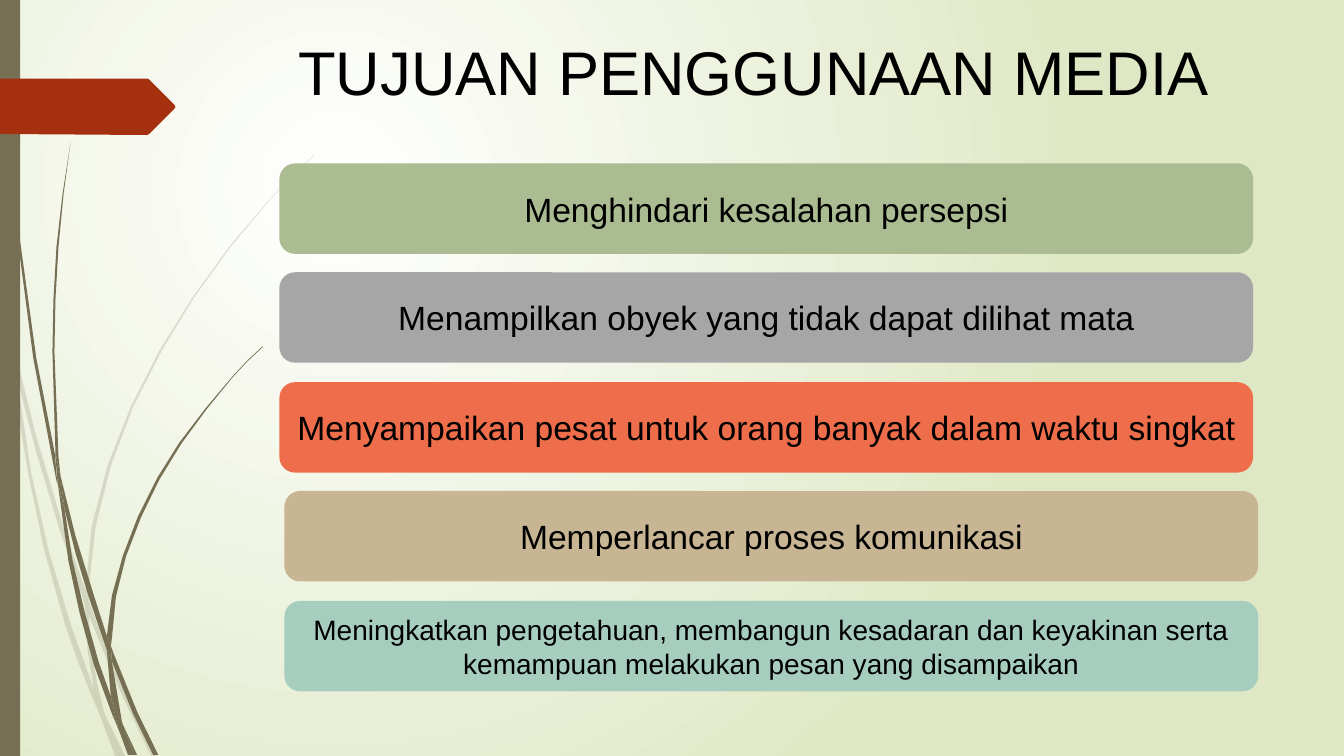
from dataclasses import dataclass

from lxml import etree
from pptx import Presentation
from pptx.dml.color import RGBColor
from pptx.enum.shapes import MSO_SHAPE
from pptx.enum.text import MSO_ANCHOR, PP_ALIGN
from pptx.oxml.ns import qn
from pptx.util import Pt

RECTANGLE = MSO_SHAPE.RECTANGLE
ROUNDED = MSO_SHAPE.ROUNDED_RECTANGLE
MIDDLE = MSO_ANCHOR.MIDDLE
CENTER = PP_ALIGN.CENTER

EMU_PER_PX = 9144
SLIDE_WIDTH, SLIDE_HEIGHT = 1333, 750


@dataclass(frozen=True)
class Theme:
    font: str = "Arial"
    ink: str = "000000"
    glow: str = "FFFFFF"
    backdrop: str = "DFE8C4"
    stalk: str = "766F54"
    tag: str = "A53010"
    sage: str = "ACBC92"
    gray: str = "A6A6A6"
    coral: str = "EE6E4B"
    sand: str = "C8B594"
    mint: str = "A6CDBD"
    title_size: int = 44
    goal_size: int = 24
    small_size: int = 20
    pale_alpha: int = 20


PALE_STALKS = [
    [(11, 350), (9, 322), (0, 282), (0, 299), (10, 344)],
    [(58, 522), (84, 599), (85, 586), (62, 520), (36, 433), (14, 345), (17, 376), (36, 449)],
    [(92, 607), (88, 596), (88, 610), (105, 652), (123, 694), (150, 750), (155, 750),
     (127, 692), (109, 650)],
    [(119, 750), (124, 750), (105, 711)],
    [(93, 683), (70, 619), (48, 545), (31, 469), (17, 376), (11, 350), (18, 410), (28, 470),
     (44, 546), (65, 621), (78, 658), (92, 693), (101, 714), (99, 707)],
    [(84, 599), (87, 646), (93, 683), (96, 692), (105, 711), (103, 706), (96, 676),
     (91, 646), (88, 610), (88, 608)],
    [(88, 584), (95, 522), (110, 462), (132, 404), (160, 349), (192, 296), (229, 245),
     (268, 198), (290, 175), (312, 154), (312, 153), (289, 175), (268, 197), (228, 244),
     (191, 295), (158, 348), (130, 403), (107, 461), (91, 522), (85, 584), (85, 586), (88, 596)],
    [(101, 714), (114, 750), (119, 750)],
    [(88, 608), (88, 610), (88, 596), (85, 586), (84, 599)],
    [(96, 692), (93, 683), (99, 707), (101, 714), (119, 750), (105, 711)],
]

DARK_STALKS = [
    [(7, 110), (17, 233), (33, 355), (56, 477), (57, 481), (55, 457), (55, 453), (36, 355),
     (19, 232), (8, 109), (5, 48), (4, 0), (3, 0), (4, 48)],
    [(88, 592), (106, 645), (106, 633), (106, 631), (93, 590), (75, 532), (60, 472),
     (64, 505), (75, 549)],
    [(113, 649), (110, 641), (111, 656), (132, 708), (152, 749), (157, 749), (136, 706)],
    [(110, 691), (98, 657), (84, 607), (72, 556), (64, 505), (57, 477), (68, 557), (79, 608),
     (93, 659), (111, 708), (117, 722), (116, 717)],
    [(60, 472), (58, 453), (54, 349), (55, 297), (58, 245), (63, 193), (70, 141), (62, 193),
     (56, 245), (53, 297), (52, 349), (55, 449)],
    [(133, 749), (136, 749), (122, 719)],
    [(57, 477), (64, 505), (60, 472), (55, 449), (55, 453)],
    [(111, 633), (115, 592), (125, 552), (140, 513), (158, 476), (180, 440), (205, 406),
     (231, 374), (245, 359), (261, 344), (260, 344), (245, 358), (231, 373), (204, 405),
     (178, 439), (156, 474), (137, 512), (122, 551), (111, 591), (106, 631), (110, 641)],
    [(117, 722), (127, 749), (131, 749)],
    [(106, 645), (110, 691), (116, 706), (122, 719), (121, 716), (111, 656), (109, 651)],
    [(106, 645), (109, 651), (111, 656), (110, 641), (106, 631), (106, 633)],
    [(116, 706), (110, 691), (116, 717), (117, 722), (130, 749), (133, 749), (122, 719)],
]

TAG = [(0, 78), (146, 78), (148, 79), (173, 104), (174, 106), (173, 108), (148, 133),
       (146, 134), (0, 133)]


class SlideBuilder:
    def __init__(self, slide, theme):
        self.slide = slide
        self.theme = theme

    def scale(self, *lengths):
        return [length * EMU_PER_PX for length in lengths]

    def background(self):
        fill = self.slide.background.fill
        fill.gradient()
        for stop, color in zip(fill.gradient_stops, (self.theme.glow, self.theme.backdrop)):
            stop.color.rgb = RGBColor.from_string(color)
        gradient = self.slide.element.find(".//" + qn("a:gradFill"))
        gradient.remove(gradient.find(qn("a:lin")))
        circle = etree.SubElement(gradient, qn("a:path"), {"path": "circle"})
        focus = {"l": "50000", "t": "50000", "r": "100000", "b": "100000"}
        etree.SubElement(circle, qn("a:fillToRect"), focus)

    def paint(self, shape, color, alpha=100):
        shape.shadow.inherit = False
        shape.fill.solid()
        shape.fill.fore_color.rgb = RGBColor.from_string(color)
        shape.line.fill.background()
        if alpha < 100:
            tone = shape.element.spPr.find(".//" + qn("a:srgbClr"))
            etree.SubElement(tone, qn("a:alpha"), {"val": str(alpha * 1000)})

    def outline(self, points, color, alpha=100):
        builder = self.slide.shapes.build_freeform(*points[0], scale=EMU_PER_PX)
        builder.add_line_segments(points[1:], close=True)
        self.paint(builder.convert_to_shape(), color, alpha)

    def block(self, kind, box, color):
        shape = self.slide.shapes.add_shape(kind, *self.scale(*box))
        self.paint(shape, color)
        return shape

    def label(self, shape, text, size):
        margin = self.scale(5)[0]
        frame = shape.text_frame
        frame_format = {"word_wrap": True, "vertical_anchor": MIDDLE,
                        "margin_left": margin, "margin_right": margin}
        for name, value in frame_format.items():
            setattr(frame, name, value)
        paragraph = frame.paragraphs[0]
        paragraph.alignment = CENTER
        run = paragraph.add_run()
        run.text = text
        for name, value in {"name": self.theme.font, "size": Pt(size)}.items():
            setattr(run.font, name, value)
        run.font.color.rgb = RGBColor.from_string(self.theme.ink)

    def title(self, text, box):
        self.label(self.slide.shapes.add_textbox(*self.scale(*box)), text, self.theme.title_size)

    def goal(self, text, box, color, size):
        shape = self.block(ROUNDED, box, color)
        shape.line.color.rgb = RGBColor.from_string(color)
        shape.line.width = Pt(1.25)
        self.label(shape, text, size)


def main():
    theme = Theme()
    presentation = Presentation()
    presentation.slide_width = SLIDE_WIDTH * EMU_PER_PX
    presentation.slide_height = SLIDE_HEIGHT * EMU_PER_PX
    slide = presentation.slides.add_slide(presentation.slide_layouts[6])
    builder = SlideBuilder(slide, theme)

    builder.background()
    for points in PALE_STALKS:
        builder.outline(points, theme.stalk, theme.pale_alpha)
    for points in DARK_STALKS:
        builder.outline(points, theme.stalk)
    builder.block(RECTANGLE, (0, 0, 20, SLIDE_HEIGHT), theme.stalk)
    builder.outline(TAG, theme.tag)
    builder.title("TUJUAN PENGGUNAAN MEDIA", (163, 12, 1170, 116))

    goals = [
        ("Menghindari kesalahan persepsi", 278, theme.sage, theme.goal_size),
        ("Menampilkan obyek yang tidak dapat dilihat mata", 278, theme.gray, theme.goal_size),
        ("Menyampaikan pesat untuk orang banyak dalam waktu singkat", 278, theme.coral,
         theme.goal_size),
        ("Memperlancar proses komunikasi", 283, theme.sand, theme.goal_size),
        ("Meningkatkan pengetahuan, membangun kesadaran dan keyakinan serta "
         "kemampuan melakukan pesan yang disampaikan", 283, theme.mint, theme.small_size),
    ]
    for index, (text, left, color, size) in enumerate(goals):
        top = 163 + index * 217 // 2
        builder.goal(text, (left, top, 964, 88), color, size)

    presentation.save("out.pptx")


if __name__ == "__main__":
    main()
